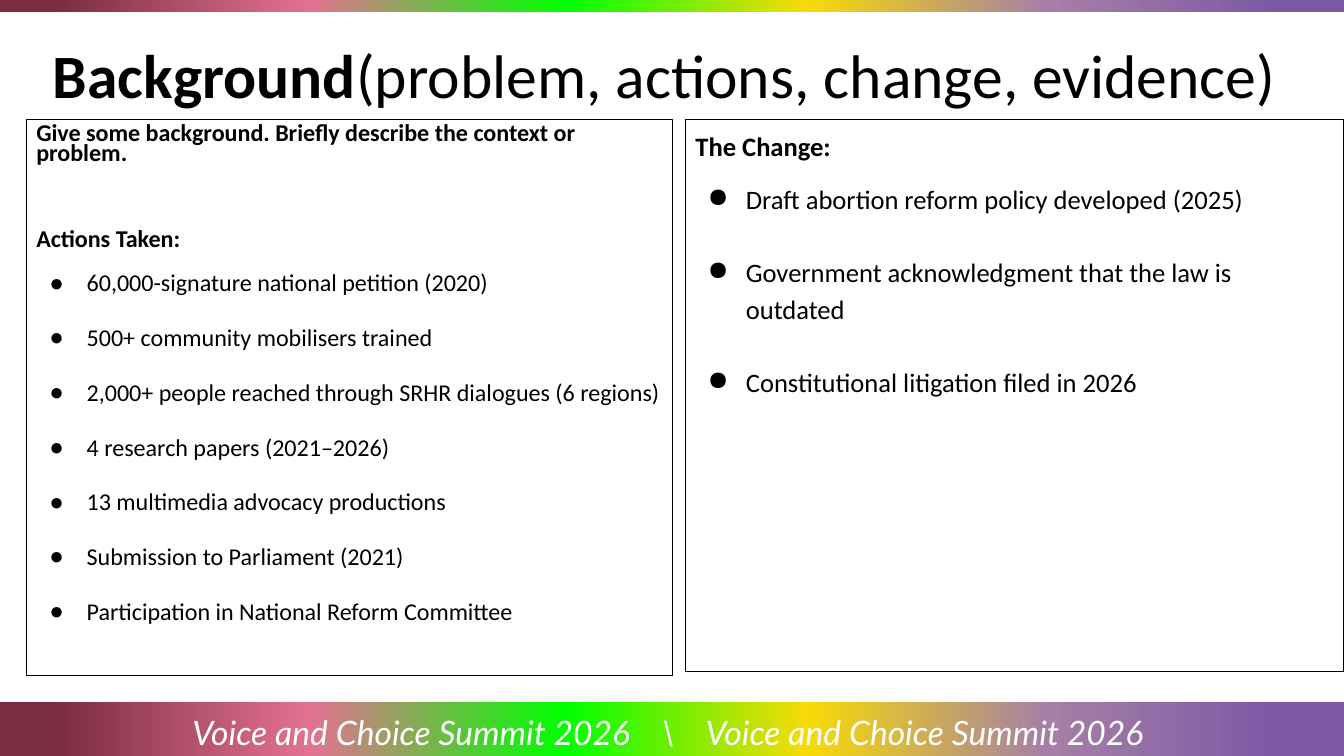
from lxml import etree
from pptx import Presentation
from pptx.dml.color import RGBColor
from pptx.enum.shapes import MSO_SHAPE
from pptx.enum.text import MSO_ANCHOR, MSO_AUTO_SIZE, PP_ALIGN
from pptx.oxml.ns import qn
from pptx.util import Inches, Pt

RECT = MSO_SHAPE.RECTANGLE
TOP, MIDDLE = MSO_ANCHOR.TOP, MSO_ANCHOR.MIDDLE
LEFT, CENTER = PP_ALIGN.LEFT, PP_ALIGN.CENTER
NO_AUTOFIT = MSO_AUTO_SIZE.NONE

BLACK = RGBColor(0x00, 0x00, 0x00)
WHITE = RGBColor(0xFF, 0xFF, 0xFF)
RAINBOW = [
    (0, RGBColor(0x7D, 0x59, 0xA5)),
    (5, RGBColor(0x7D, 0x59, 0xA5)),
    (22, RGBColor(0xA5, 0x7F, 0xA6)),
    (40, RGBColor(0xF7, 0xDA, 0x06)),
    (58, RGBColor(0x00, 0xFF, 0x00)),
    (77, RGBColor(0xE3, 0x71, 0x91)),
    (96, RGBColor(0x7B, 0x2C, 0x42)),
    (100, RGBColor(0x7B, 0x2C, 0x42)),
]

ACTIONS = [
    "60,000-signature national petition (2020)",
    "500+ community mobilisers trained",
    "2,000+ people reached through SRHR dialogues (6 regions)",
    "4 research papers (2021–2026)",
    "13 multimedia advocacy productions",
    "Submission to Parliament (2021)",
    "Participation in National Reform Committee",
]
CHANGES = [
    "Draft abortion reform policy developed (2025)",
    "Government acknowledgment that the law is outdated",
    "Constitutional litigation filed in 2026",
]
SUMMIT = "Voice and Choice Summit 2026"


def set_attrs(target, values):
    """Set each named attribute of the target."""
    for name, value in values.items():
        setattr(target, name, value)


def place(s, left, top, width, height):
    """Move and size a shape, in inches."""
    box = dict(left=left, top=top, width=width, height=height)
    set_attrs(s, {name: Inches(value) for name, value in box.items()})


def set_frame(tf, anchor=TOP):
    """Give a text frame wrapping, fixed size and an anchor."""
    set_attrs(tf, dict(word_wrap=True, auto_size=NO_AUTOFIT, vertical_anchor=anchor))


def add_rect(slide, left, top, width, height):
    """Add a plain rectangle without shadow."""
    s = slide.shapes.add_shape(RECT, *map(Inches, (left, top, width, height)))
    s.shadow.inherit = False
    return s


def add_band(slide, top, height):
    """Add a full-width rainbow band."""
    s = add_rect(slide, 0, top, 13.33, height)
    s.line.fill.background()
    s.fill.gradient()
    s.fill.gradient_angle = 180
    stops = s.fill._fill._gradFill.find(qn("a:gsLst"))
    for stop in list(stops):
        stops.remove(stop)
    for percent, color in RAINBOW:
        stop = etree.SubElement(stops, qn("a:gs"), pos=str(percent * 1000))
        etree.SubElement(stop, qn("a:srgbClr"), val=str(color))


def add_run(p, text, **font):
    """Add a run with the given font values."""
    r = p.add_run()
    r.text = text
    color = font.pop("color", BLACK)
    set_attrs(r.font, {"name": "Calibri", **font})
    r.font.color.rgb = color


def set_bullet(p, hanging):
    """Give a paragraph a round black bullet, or none without a hanging indent."""
    pPr = p._p.get_or_add_pPr()
    pPr.set("marL", str(Inches(0.5) if hanging else 0))
    pPr.set("indent", str(-Inches(hanging)))
    if hanging:
        color = etree.SubElement(pPr, qn("a:buClr"))
        etree.SubElement(color, qn("a:srgbClr"), val=str(BLACK))
        etree.SubElement(pPr, qn("a:buChar"), char="●")
    else:
        etree.SubElement(pPr, qn("a:buNone"))


def fill_panel(s, size, spacing, hanging, gap, headings, items):
    """Fill an outlined panel with (text, spacing, space before) headings and a list."""
    s.fill.background()
    s.line.color.rgb = BLACK
    s.line.width = Pt(0.75)
    tf = s.text_frame
    set_frame(tf)
    rows = [(text, ls, before, 0) for text, ls, before in headings]
    rows += [(text, spacing, gap if i else 12, hanging) for i, text in enumerate(items)]
    for i, (text, ls, before, indent) in enumerate(rows):
        p = tf.add_paragraph() if i else tf.paragraphs[0]
        set_bullet(p, indent)
        set_attrs(p, dict(alignment=LEFT, line_spacing=ls,
                          space_before=Pt(before), space_after=Pt(0)))
        add_run(p, text, size=Pt(size), bold=not indent)


def add_title(slide):
    """Fill the title placeholder."""
    s = slide.shapes.title
    place(s, 0, 0.27, 13.33, 0.92)
    tf = s.text_frame
    set_frame(tf, MIDDLE)
    tf.margin_right = Inches(0.24)
    p = tf.paragraphs[0]
    p.alignment = CENTER
    add_run(p, "Background", size=Pt(44), bold=True)
    add_run(p, "(problem, actions, change, evidence)", size=Pt(44), bold=False)


def add_footer(slide):
    """Add the summit name twice around a backslash, on centred tab stops."""
    s = slide.shapes.add_textbox(*map(Inches, (0, 6.99, 13.33, 0.5)))
    set_frame(s.text_frame)
    p = s.text_frame.paragraphs[0]
    p.alignment = LEFT
    p.line_spacing = 1.07
    tabs = etree.SubElement(p._p.get_or_add_pPr(), qn("a:tabLst"))
    for position in (3.98, 6.53, 9.07):
        etree.SubElement(tabs, qn("a:tab"), pos=str(Inches(position)), algn="ctr")
    add_run(p, f"\t{SUMMIT}\t\\\t{SUMMIT}", name="Lato", size=Pt(24),
            italic=True, color=WHITE)


def main():
    """Build the slide and save it."""
    prs = Presentation()
    prs.slide_width, prs.slide_height = Inches(13.33), Inches(7.5)
    slide = prs.slides.add_slide(prs.slide_layouts[1])
    add_band(slide, 0, 0.12)
    add_band(slide, 6.96, 0.57)
    add_title(slide)
    body = slide.placeholders[1]
    place(body, 0.26, 1.19, 6.41, 5.51)
    fill_panel(body, 17.2, 0.95, 0.37, 19.5, [
        ("Give some background. Briefly describe the context or problem.", 0.7, 0),
        ("Actions Taken:", 0.95, 43),
    ], ACTIONS)
    change = add_rect(slide, 6.8, 1.19, 6.53, 5.47)
    fill_panel(change, 19, 1.15, 0.38, 26, [("The Change:", 1.15, 0)], CHANGES)
    add_footer(slide)
    prs.save("out.pptx")


if __name__ == "__main__":
    main()
